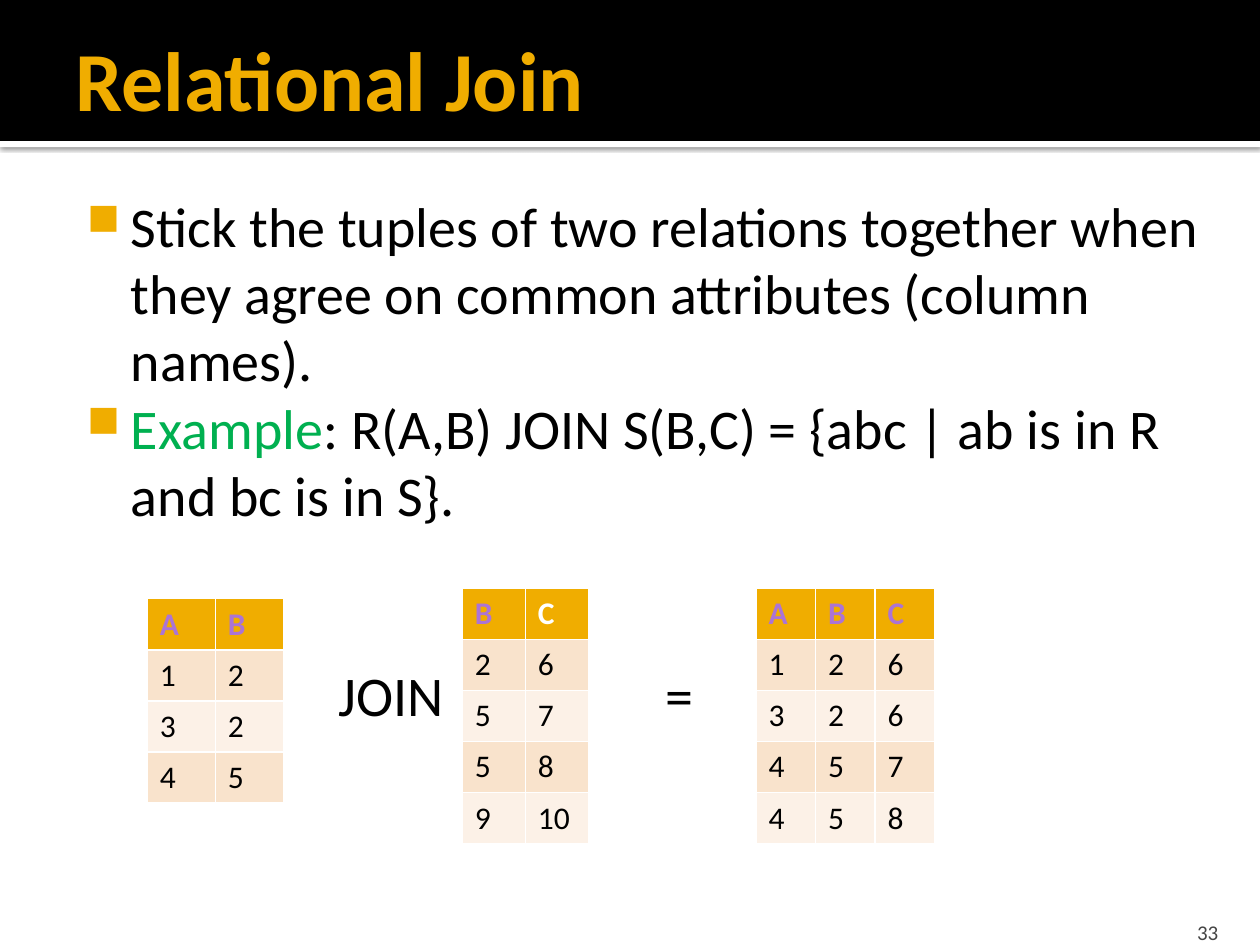
import lxml.etree
import pptx
import pptx.dml.color
import pptx.enum.shapes
import pptx.enum.text
import pptx.oxml.ns
import pptx.util
from pptx.util import Cm

FONT = "Calibri"
COLORS = {
    "black": "000000", "white": "FFFFFF", "gold": "F0AD00", "green": "00B050",
    "purple": "AB74D5", "gray": "454545", "band_dark": "F9E3CC", "band_light": "FCF1E7",
}

# Content
TITLE = "Relational Join"
BULLETS = [
    [("Stick the tuples of two relations together when they agree on "
      "common attributes (column names).", "black")],
    [("Example", "green"),
     (": R(A,B) JOIN S(B,C) = {abc | ab is in R and bc is in S}.", "black")],
]
OPERATORS = [("JOIN", 6.83, 2.3), ("=", 13.41, 0.8)]  # text, left, width
SLIDE_NUMBER = "33"
ROW_HEIGHT = 1.03
RELATIONS = [
    {"left": 2.97, "top": 12.07, "column": 1.37, "header": "AB",
     "rows": [(1, 2), (3, 2), (4, 5)]},
    {"left": 15.24, "top": 11.86, "column": 1.2, "header": "ABC",
     "rows": [(1, 2, 6), (3, 2, 6), (4, 5, 7), (4, 5, 8)]},
    {"left": 9.32, "top": 11.86, "column": 1.27, "header": "BC", "plain": "C",
     "rows": [(2, 6), (5, 7), (5, 8), (9, 10)]},
]


def rgb(name):
    return pptx.dml.color.RGBColor.from_string(COLORS[name])


def style(font, size, color, bold=False):
    font.name, font.size, font.bold = FONT, pptx.util.Pt(size), bold
    font.color.rgb = rgb(color)


def add_bar(slide, top, height, color):
    bar = slide.shapes.add_shape(
        pptx.enum.shapes.MSO_SHAPE.RECTANGLE, 0, Cm(top), Cm(25.4), Cm(height))
    bar.shadow.inherit = False
    bar.fill.solid()
    bar.fill.fore_color.rgb = rgb(color)
    bar.line.fill.background()
    return bar


def add_text(slide, box, insets, text="", size=32, color="black", bold=False, anchor="TOP"):
    frame = slide.shapes.add_textbox(*map(Cm, box)).text_frame
    frame.word_wrap = True
    frame.vertical_anchor = pptx.enum.text.MSO_ANCHOR[anchor]
    (frame.margin_left, frame.margin_top,
     frame.margin_right, frame.margin_bottom) = map(Cm, insets)
    frame.text = text
    style(frame.paragraphs[0].font, size, color, bold)
    return frame


def add_drop_shadow(shape):
    effects = shape._element.spPr.find(pptx.oxml.ns.qn("a:effectLst"))
    effects.append(lxml.etree.fromstring(
        f'<a:outerShdw {pptx.oxml.ns.nsdecls("a")} blurRad="31750" dist="10160" '
        f'dir="5400000"><a:srgbClr val="{COLORS["black"]}"><a:alpha val="60000"/>'
        '</a:srgbClr></a:outerShdw>'))


def add_bullet(paragraph):
    properties = paragraph._p.get_or_add_pPr()
    properties.set("marL", str(Cm(1.22)))
    properties.set("indent", str(Cm(-0.89)))
    namespace = pptx.oxml.ns.nsdecls("a")
    for xml in (f'<a:buClr {namespace}><a:srgbClr val="{COLORS["gold"]}"/></a:buClr>',
                f'<a:buSzPct {namespace} val="80000"/>',
                f'<a:buChar {namespace} char="■"/>'):
        properties.insert_element_before(lxml.etree.fromstring(xml), "a:defRPr")


def add_relation(slide, relation):
    rows = [relation["header"], *relation["rows"]]
    count = len(relation["header"])
    table = slide.shapes.add_table(
        len(rows), count, Cm(relation["left"]), Cm(relation["top"]),
        Cm(relation["column"] * count), Cm(ROW_HEIGHT * len(rows))).table
    for row_index, values in enumerate(rows):
        is_header = row_index == 0
        band = "band_dark" if row_index % 2 else "band_light"
        for column_index, value in enumerate(values):
            cell = table.cell(row_index, column_index)
            cell.text = str(value)
            cell.fill.solid()
            cell.fill.fore_color.rgb = rgb("gold" if is_header else band)
            header_color = "white" if value == relation.get("plain") else "purple"
            style(cell.text_frame.paragraphs[0].font, 18,
                  header_color if is_header else "black", is_header)


def main():
    presentation = pptx.Presentation()
    presentation.slide_width, presentation.slide_height = Cm(25.4), Cm(19.05)
    slide = presentation.slides.add_slide(presentation.slide_layouts[6])

    # Header band and title
    add_drop_shadow(add_bar(slide, 2.84, 0.13, "white"))
    add_bar(slide, 0, 2.84, "black")
    add_text(slide, (1.27, 0.2, 24.13, 2.74), (0.25, 0.13, 0.13, 0.13),
             TITLE, 48, "gold", True, "MIDDLE")

    # Bullets
    body = add_text(slide, (1.27, 3.61, 23.7, 7.4), (0.15, 0.25, 0.25, 0.13))
    for index, runs in enumerate(BULLETS):
        paragraph = body.add_paragraph() if index else body.paragraphs[0]
        add_bullet(paragraph)
        for text, color in runs:
            run = paragraph.add_run()
            run.text = text
            style(run.font, 32, color)

    # Join equation
    for relation in RELATIONS:
        add_relation(slide, relation)
    for text, left, width in OPERATORS:
        add_text(slide, (left, 13.31, width, 1.35), (0, 0, 0, 0), text)

    # Slide number
    number = add_text(slide, (22.78, 18.29, 2.03, 0.76), (0.25, 0.13, 0.25, 0),
                      SLIDE_NUMBER, 12, "gray", anchor="BOTTOM")
    number.paragraphs[0].alignment = pptx.enum.text.PP_ALIGN.RIGHT

    presentation.save("out.pptx")


if __name__ == "__main__":
    main()
